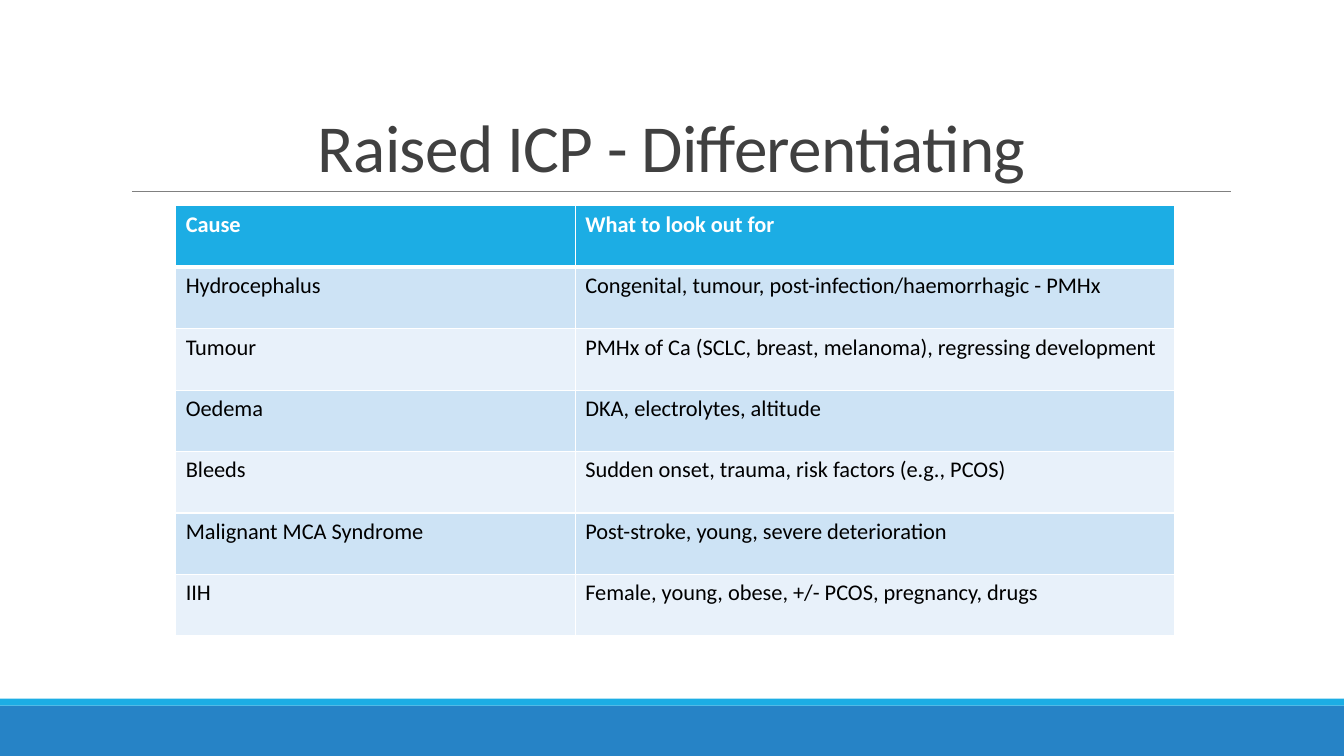
from dataclasses import dataclass

from lxml import etree
from pptx import Presentation
from pptx.dml.color import RGBColor
from pptx.enum import shapes, text
from pptx.oxml import ns
from pptx.util import Pt


@dataclass(frozen=True)
class Theme:
    font: str = "Calibri"
    title_size: int = 48
    table_size: int = 16
    title: str = "404040"
    rule: str = "808080"
    accent: str = "1CADE4"
    footer: str = "2683C6"
    bands: tuple = ("CDE3F5", "E8F1FA")
    white: str = "FFFFFF"
    black: str = "000000"


THEME = Theme()
WIDTH, HEIGHT = 960, 540

CAUSES = [
    ("Cause", "What to look out for"),
    ("Hydrocephalus", "Congenital, tumour, post-infection/haemorrhagic - PMHx"),
    ("Tumour", "PMHx of Ca (SCLC, breast, melanoma), regressing development"),
    ("Oedema", "DKA, electrolytes, altitude"),
    ("Bleeds", "Sudden onset, trauma, risk factors (e.g., PCOS)"),
    ("Malignant MCA Syndrome", "Post-stroke, young, severe deterioration"),
    ("IIH", "Female, young, obese, +/- PCOS, pregnancy, drugs"),
]


def rgb(color):
    return RGBColor.from_string(color)


def style_font(font, size, color, bold=False):
    font.name, font.size, font.bold = THEME.font, Pt(size), bold
    font.color.rgb = rgb(color)


def add_footer(slide, left, top, width, height):
    """Dark band with a thin accent strip along its top."""
    strip_height = 5
    for color, band_top, band_height in (
        (THEME.footer, top + strip_height, height - strip_height),
        (THEME.accent, top, strip_height),
    ):
        band = slide.shapes.add_shape(
            shapes.MSO_SHAPE.RECTANGLE,
            Pt(left), Pt(band_top), Pt(width), Pt(band_height))
        band.shadow.inherit = False
        band.fill.solid()
        band.fill.fore_color.rgb = rgb(color)
        band.line.fill.background()


def add_heading(slide, left, top, width, height, wording):
    """Centred title standing on a thin rule that is wider than it."""
    bottom = top + height
    rule = slide.shapes.add_connector(
        shapes.MSO_CONNECTOR.STRAIGHT,
        Pt(left - 33.8), Pt(bottom), Pt(left + width + 47.5), Pt(bottom))
    rule.line.color.rgb = rgb(THEME.rule)
    rule.line.width = Pt(0.5)
    etree.SubElement(rule.element.spPr, ns.qn("a:effectLst"))

    title = slide.shapes.title
    title.left, title.top = Pt(left), Pt(top)
    title.width, title.height = Pt(width), Pt(height)
    frame = title.text_frame
    frame.text = wording
    frame.word_wrap = True
    frame.auto_size = text.MSO_AUTO_SIZE.NONE
    frame.vertical_anchor = text.MSO_ANCHOR.BOTTOM
    heading = frame.paragraphs[0]
    heading.alignment = text.PP_ALIGN.CENTER
    heading.line_spacing = 0.85
    style_font(heading.font, THEME.title_size, THEME.title)
    # Letter spacing in hundredths of a point
    heading.runs[0].font._element.set("spc", "-50")


def add_borders(cell, bottom_width):
    """White edges; call before the fill, which must follow them in the XML."""
    properties = cell._tc.get_or_add_tcPr()
    for side, width in (("L", 1), ("R", 1), ("T", 1), ("B", bottom_width)):
        edge = etree.SubElement(properties, ns.qn(f"a:ln{side}"), w=str(Pt(width)))
        fill = etree.SubElement(edge, ns.qn("a:solidFill"))
        etree.SubElement(fill, ns.qn("a:srgbClr"), val=THEME.white)


def add_cause_table(slide, left, top, width, height, rows):
    """Two columns in the ratio 2 to 3 under a header row."""
    table = slide.shapes.add_table(
        len(rows), 2, Pt(left), Pt(top), Pt(width), Pt(height)).table
    for column, share in zip(table.columns, (0.4, 0.6)):
        column.width = Pt(width * share)
    for row_index, wordings in enumerate(rows):
        is_header = row_index == 0
        table.rows[row_index].height = Pt(height / len(rows))
        fill = THEME.accent if is_header else THEME.bands[(row_index - 1) % 2]
        color = THEME.white if is_header else THEME.black
        for column_index, wording in enumerate(wordings):
            cell = table.cell(row_index, column_index)
            add_borders(cell, 3 if is_header else 1)
            cell.fill.solid()
            cell.fill.fore_color.rgb = rgb(fill)
            cell.text = wording
            style_font(cell.text_frame.paragraphs[0].font,
                       THEME.table_size, color, is_header)


def build_differential_slide(deck):
    slide = deck.slides.add_slide(deck.slide_layouts[5])
    add_footer(slide, 0, 499, WIDTH, HEIGHT - 499)
    add_heading(slide, 128, 22.5, 703.5, 114.3, "Raised ICP - Differentiating")
    add_cause_table(slide, 125.5, 147, 713.5, 307.2, CAUSES)


def main():
    deck = Presentation()
    deck.slide_width, deck.slide_height = Pt(WIDTH), Pt(HEIGHT)
    build_differential_slide(deck)
    deck.save("out.pptx")


if __name__ == "__main__":
    main()
